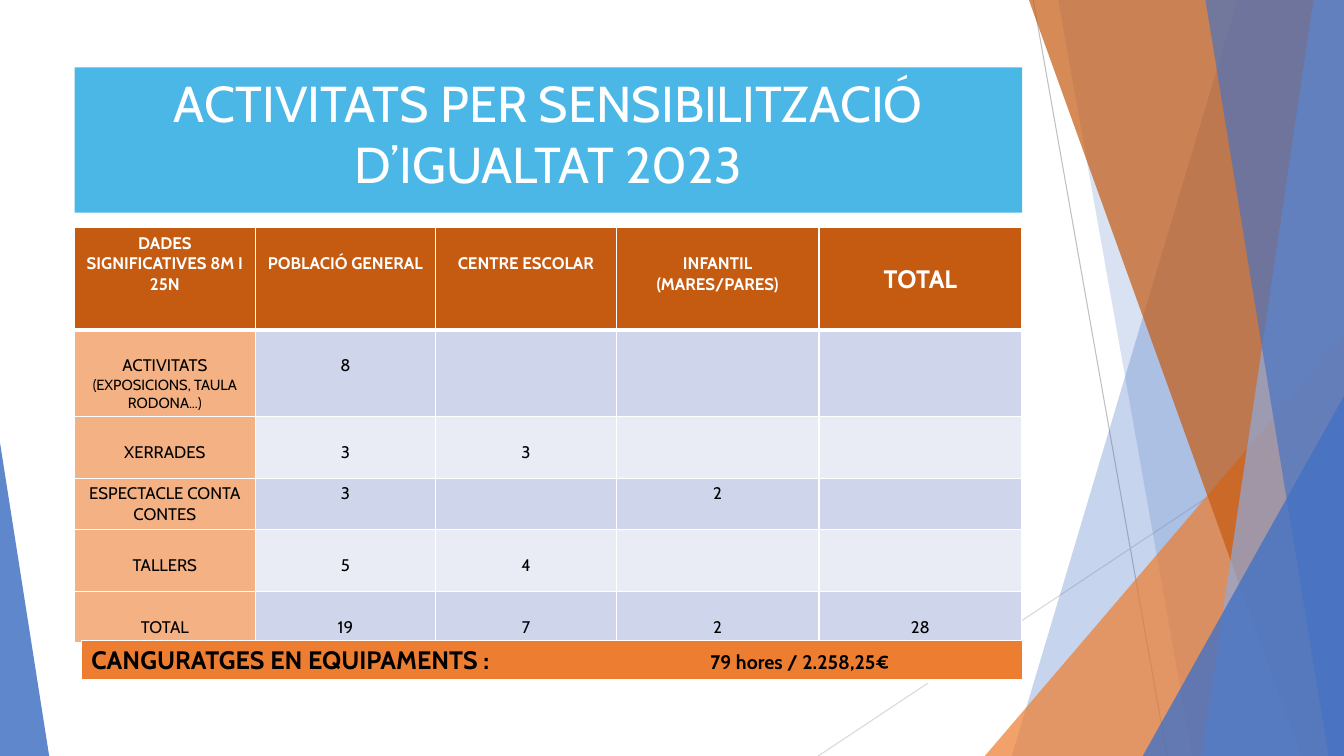
from lxml import etree
from pptx import Presentation
from pptx import util as u
from pptx.dml.color import RGBColor
from pptx.enum import shapes, text
from pptx.oxml import ns

COLORS = {
    "white": "FFFFFF", "black": "000000", "sky": "4BB7E7", "blue": "4472C4",
    "pale_blue": "8FAADC", "orange": "ED7D31", "rust": "C55A11", "peach": "F4B183",
    "band_dark": "CFD5EA", "band_light": "E9EBF5", "grey": "BFBFBF", "light_grey": "D9D9D9",
}
FONT = "Cabin"
WIDTH, HEIGHT = 33.87, 19.05
MARGIN = 0.13      # default cell margin above and below the text
BLANK_LINE = 0.52  # height of one 12 pt line

HEADERS = ["DADES SIGNIFICATIVES 8M I 25N", "POBLACIÓ GENERAL", "CENTRE ESCOLAR",
           "INFANTIL (MARES/PARES)", "TOTAL"]
# Row label, values, extra space above the text
ACTIVITIES = [
    ("ACTIVITATS", ["8", "", "", ""], BLANK_LINE),
    ("XERRADES", ["3", "3", "", ""], BLANK_LINE),
    ("ESPECTACLE CONTA CONTES", ["3", "", "2", ""], 0),
    ("TALLERS", ["5", "4", "", ""], BLANK_LINE),
    ("TOTAL", ["19", "7", "2", "28"], BLANK_LINE),
]
COLUMN_WIDTHS = [4.55, 4.55, 4.55, 5.11, 5.11]
ROW_HEIGHTS = [2.57, 2.18, 1.29, 1.29, 1.29, 1.29]


def rgb(name):
    return RGBColor.from_string(COLORS[name])


def add_xml(parent, tag, **attributes):
    return etree.SubElement(parent, ns.qn(tag), attributes)


def paint(shape, color, opacity=100):
    shape.shadow.inherit = False
    shape.line.fill.background()
    shape.fill.solid()
    shape.fill.fore_color.rgb = rgb(color)
    if opacity < 100:
        tone = shape.fill._xPr.find(".//" + ns.qn("a:srgbClr"))
        add_xml(tone, "a:alpha", val=str(opacity * 1000))


def add_wedge(slide, points, color, opacity):
    corners = [(u.Cm(x), u.Cm(y)) for x, y in points]
    builder = slide.shapes.build_freeform(*corners[0], scale=1.0)
    builder.add_line_segments(corners[1:], close=True)
    paint(builder.convert_to_shape(), color, opacity)


def add_right_band(slide, top_x, bottom_x, color, opacity):
    points = [(top_x, 0), (WIDTH, 0), (WIDTH, HEIGHT), (bottom_x, HEIGHT)]
    add_wedge(slide, points, color, opacity)


def add_triangle(slide, left, top, width, apex, color, opacity):
    box = slide.shapes.add_shape(shapes.MSO_SHAPE.ISOSCELES_TRIANGLE, u.Cm(left),
                                 u.Cm(top), u.Cm(width), u.Cm(HEIGHT - top))
    box.adjustments[0] = apex
    paint(box, color, opacity)


def add_line(slide, start, end, color):
    line = slide.shapes.add_connector(shapes.MSO_CONNECTOR.STRAIGHT,
                                      *[u.Cm(value) for value in start + end])
    line.line.color.rgb = rgb(color)
    line.line.width = u.Pt(0.75)
    add_xml(line._element.spPr, "a:effectLst")


def add_span(para, content, size, color, bold=False):
    span = para.add_run()
    span.text = content
    for name, value in {"name": FONT, "size": u.Pt(size), "bold": bold}.items():
        setattr(span.font, name, value)
    span.font.color.rgb = rgb(color)


def style_cell(cell, color, space_above=0, bottom_width=1):
    properties = cell._tc.get_or_add_tcPr()
    for side, width in {"L": 1, "R": 1, "T": 1, "B": bottom_width}.items():
        edge = add_xml(properties, "a:ln" + side, w=str(u.Pt(width)))
        add_xml(add_xml(edge, "a:solidFill"), "a:srgbClr", val=COLORS["white"])
    cell.fill.solid()
    cell.fill.fore_color.rgb = rgb(color)
    cell.margin_top = u.Cm(MARGIN + space_above)


def write_cell(cell, content, size=12, color="black", bold=False):
    para = cell.text_frame.paragraphs[0]
    para.alignment = text.PP_ALIGN.CENTER
    if content:
        add_span(para, content, size, color, bold)


def add_grid(slide, left, top, widths, heights):
    frame = slide.shapes.add_table(len(heights), len(widths), u.Cm(left), u.Cm(top),
                                   u.Cm(sum(widths)), u.Cm(sum(heights)))
    table = frame.table
    for column, width in zip(table.columns, widths):
        column.width = u.Cm(width)
    for row, height in zip(table.rows, heights):
        row.height = u.Cm(height)
    return table


def add_background(slide):
    add_line(slide, (26.04, 0), (29.41, HEIGHT), "grey")
    add_line(slide, (WIDTH, 10.24), (20.62, HEIGHT), "light_grey")
    add_right_band(slide, 31.19, 25.5, "blue", 30)
    add_right_band(slide, 26.67, 30.05, "blue", 20)
    add_triangle(slide, 24.82, 8.46, 9.05, 1, "orange", 72)
    add_right_band(slide, 25.93, 32.79, "rust", 70)
    add_right_band(slide, 33.1, 30.28, "pale_blue", 70)
    add_right_band(slide, 30.38, 33.48, "blue", 65)
    add_triangle(slide, 28.8, 9.98, 5.07, 1, "blue", 80)
    add_triangle(slide, 0, 11.15, 1.24, 0, "blue", 85)


def add_title(slide, content):
    box = slide.shapes.add_shape(shapes.MSO_SHAPE.RECTANGLE, u.Cm(1.88), u.Cm(1.7),
                                 u.Cm(23.88), u.Cm(3.66))
    paint(box, "sky")
    box.text_frame.word_wrap = True
    box.text_frame.vertical_anchor = text.MSO_ANCHOR.TOP
    para = box.text_frame.paragraphs[0]
    para.alignment = text.PP_ALIGN.CENTER
    add_span(para, content, 36, "white")


def add_activity_table(slide):
    table = add_grid(slide, 1.88, 5.74, COLUMN_WIDTHS, ROW_HEIGHTS)

    # Header row
    spaces = [0] + [BLANK_LINE] * 3 + [BLANK_LINE * 1.5]
    for index, (header, space) in enumerate(zip(HEADERS, spaces)):
        cell = table.cell(0, index)
        style_cell(cell, "rust", space, bottom_width=3)
        write_cell(cell, header, 18 if header == "TOTAL" else 12, "white", True)

    # Activity rows in alternating bands
    for number, (label, values, space) in enumerate(ACTIVITIES, 1):
        band = "band_dark" if number % 2 else "band_light"
        for index, content in enumerate([label] + values):
            cell = table.cell(number, index)
            style_cell(cell, band if index else "peach", space)
            write_cell(cell, content)

    # Smaller second line of the first label
    detail = table.cell(1, 0).text_frame.add_paragraph()
    detail.alignment = text.PP_ALIGN.CENTER
    add_span(detail, "(EXPOSICIONS, TAULA RODONA...)", 10.5, "black")


def add_childcare_bar(slide):
    cell = add_grid(slide, 2.05, 16.13, [23.71], [1.02]).cell(0, 0)
    style_cell(cell, "orange", bottom_width=3)
    para = cell.text_frame.paragraphs[0]
    tabs = add_xml(para._p.get_or_add_pPr(), "a:tabLst")
    add_xml(tabs, "a:tab", pos=str(u.Cm(15.6)), algn="l")
    add_span(para, "CANGURATGES EN EQUIPAMENTS :\t", 18, "black", True)
    add_span(para, "79 hores / 2.258,25€", 14, "black", True)


def main():
    deck = Presentation()
    deck.slide_width, deck.slide_height = u.Cm(WIDTH), u.Cm(HEIGHT)
    slide = deck.slides.add_slide(deck.slide_layouts[6])
    add_background(slide)
    add_title(slide, "ACTIVITATS PER SENSIBILITZACIÓ D’IGUALTAT 2023")
    add_activity_table(slide)
    add_childcare_bar(slide)
    deck.save("out.pptx")


if __name__ == "__main__":
    main()
